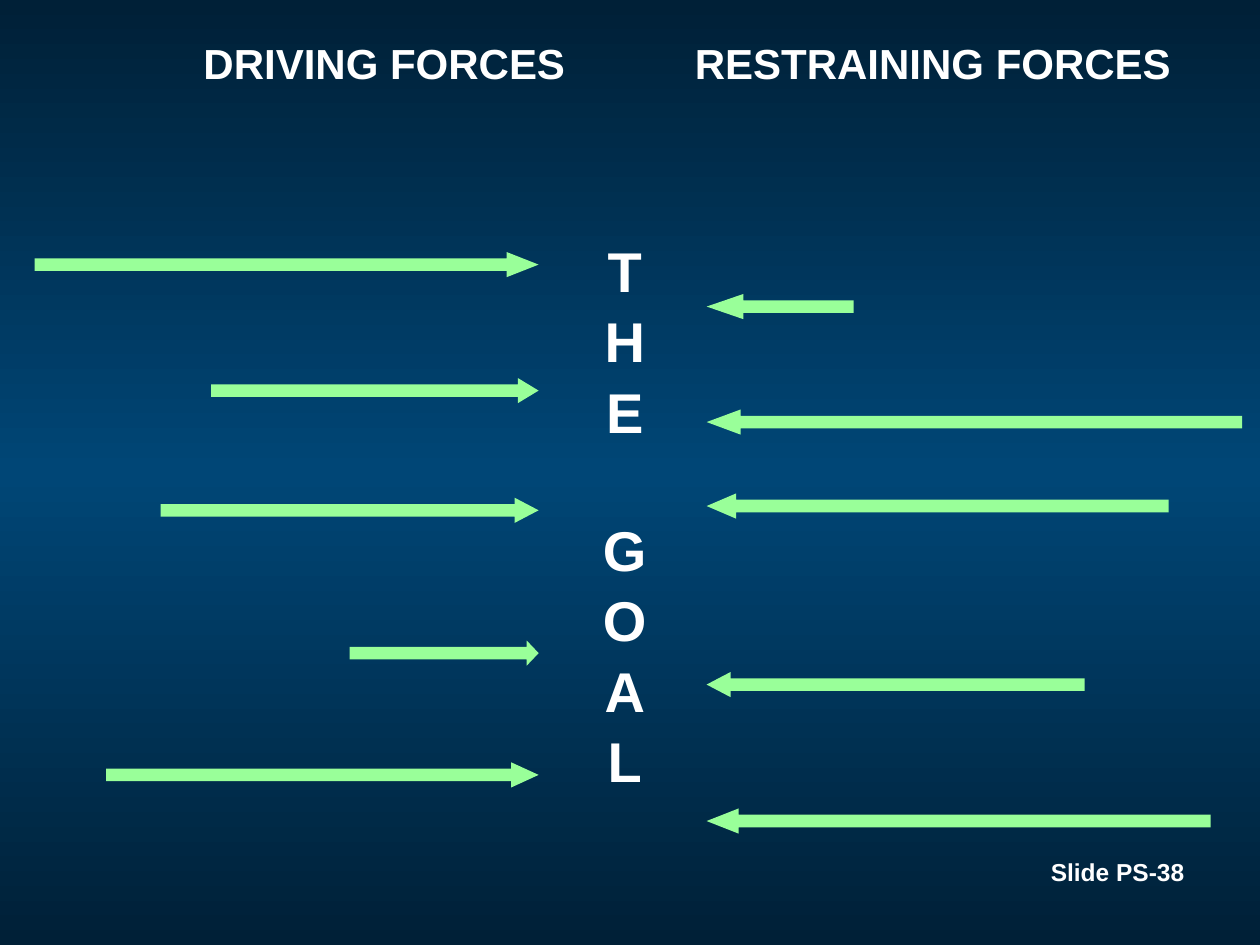
from copy import deepcopy

from pptx import Presentation
from pptx.dml.color import RGBColor
from pptx.enum.shapes import MSO_SHAPE
from pptx.enum.text import MSO_AUTO_SIZE, PP_ALIGN
from pptx.util import Inches, Pt

NAVY = RGBColor(0x00, 0x20, 0x37)
BLUE = RGBColor(0x00, 0x46, 0x76)
GREEN = RGBColor(0x99, 0xFF, 0x99)
WHITE = RGBColor(0xFF, 0xFF, 0xFF)

COLS, ROWS = 120, 90
ARROW_H = 2.4
HEAD_SHARE = 0.06
DRIVING_TIP, RESTRAINING_TIP = 51.3, 67.3

DRIVING = [(24, 48), (36, 31.2), (47.4, 36), (61, 18), (72.6, 41.2)]
RESTRAINING = [(28, 14, 3.5), (39, 51), (47, 44), (64, 36), (77, 48)]


class ForceField:
    """Style and drawing methods for the slide, measured in grid columns and rows."""

    def __init__(self, prs):
        self.font = "Arial"
        self.s = prs.slides.add_slide(prs.slide_layouts[6])
        self.cw = prs.slide_width / COLS
        self.rh = prs.slide_height / ROWS

    def box(self, x, y, w, h):
        return int(x * self.cw), int(y * self.rh), int(w * self.cw), int(h * self.rh)

    def shape(self, kind, x, y, w, h):
        sp = self.s.shapes.add_shape(kind, *self.box(x, y, w, h))
        sp.shadow.inherit = False
        sp.line.fill.background()
        return sp

    def backdrop(self, colors):
        sp = self.shape(MSO_SHAPE.RECTANGLE, 0, 0, COLS, ROWS)
        sp.fill.gradient()
        sp.fill.gradient_angle = 270
        stops = sp._element.xpath(".//a:gsLst")[0]
        stops.append(deepcopy(stops[-1]))
        for i, (stop, color) in enumerate(zip(sp.fill.gradient_stops, colors)):
            stop.position = i / (len(colors) - 1)
            stop.color.rgb = color

    def arrow(self, x, y, length, head=None, rotation=0):
        sp = self.shape(MSO_SHAPE.LEFT_ARROW, x, y, length, ARROW_H)
        sp.fill.solid()
        sp.fill.fore_color.rgb = GREEN
        sp.adjustments[0] = 0.5
        sp.adjustments[1] = (head or HEAD_SHARE * 1.06 * length) / ARROW_H
        sp.rotation = rotation

    def text(self, paragraphs, x, y, w, h, size, align=PP_ALIGN.LEFT, wrap=True, gap=0, spacing=None):
        tf = self.s.shapes.add_textbox(*self.box(x, y, w, h)).text_frame
        tf.word_wrap = wrap
        tf.auto_size = MSO_AUTO_SIZE.NONE
        for i, words in enumerate(paragraphs):
            p = tf.add_paragraph() if i else tf.paragraphs[0]
            p.text = words
            p.alignment = align
            p.line_spacing = spacing
            if i:
                p.space_before = Pt(gap)
            for r in p.runs:
                r.font.name = self.font
                r.font.size = Pt(size)
                r.font.bold = True
                r.font.color.rgb = WHITE


def main():
    prs = Presentation()
    prs.slide_width, prs.slide_height = Inches(10), Inches(7.5)
    field = ForceField(prs)
    field.backdrop([NAVY, BLUE, NAVY])
    field.text(["Slide PS-38"], 86, 81, 28, 6.2, 14, PP_ALIGN.RIGHT)
    field.text(["DRIVING FORCES"], 10, 3, 45, 6, 24, PP_ALIGN.RIGHT)
    field.text(["RESTRAINING FORCES"], 65, 3, 56.6, 6, 24)
    goal = ["\n".join(word) for word in ("THE", "GOAL")]
    field.text(goal, 56.2, 21.6, 6.6, 52.3, 32, PP_ALIGN.CENTER, wrap=False, gap=38.4, spacing=1.05)
    for y, length, *head in RESTRAINING:
        field.arrow(RESTRAINING_TIP, y, length, *head)
    for y, length in DRIVING:
        field.arrow(DRIVING_TIP - length, y, length, rotation=180)
    prs.save("out.pptx")


if __name__ == "__main__":
    main()
